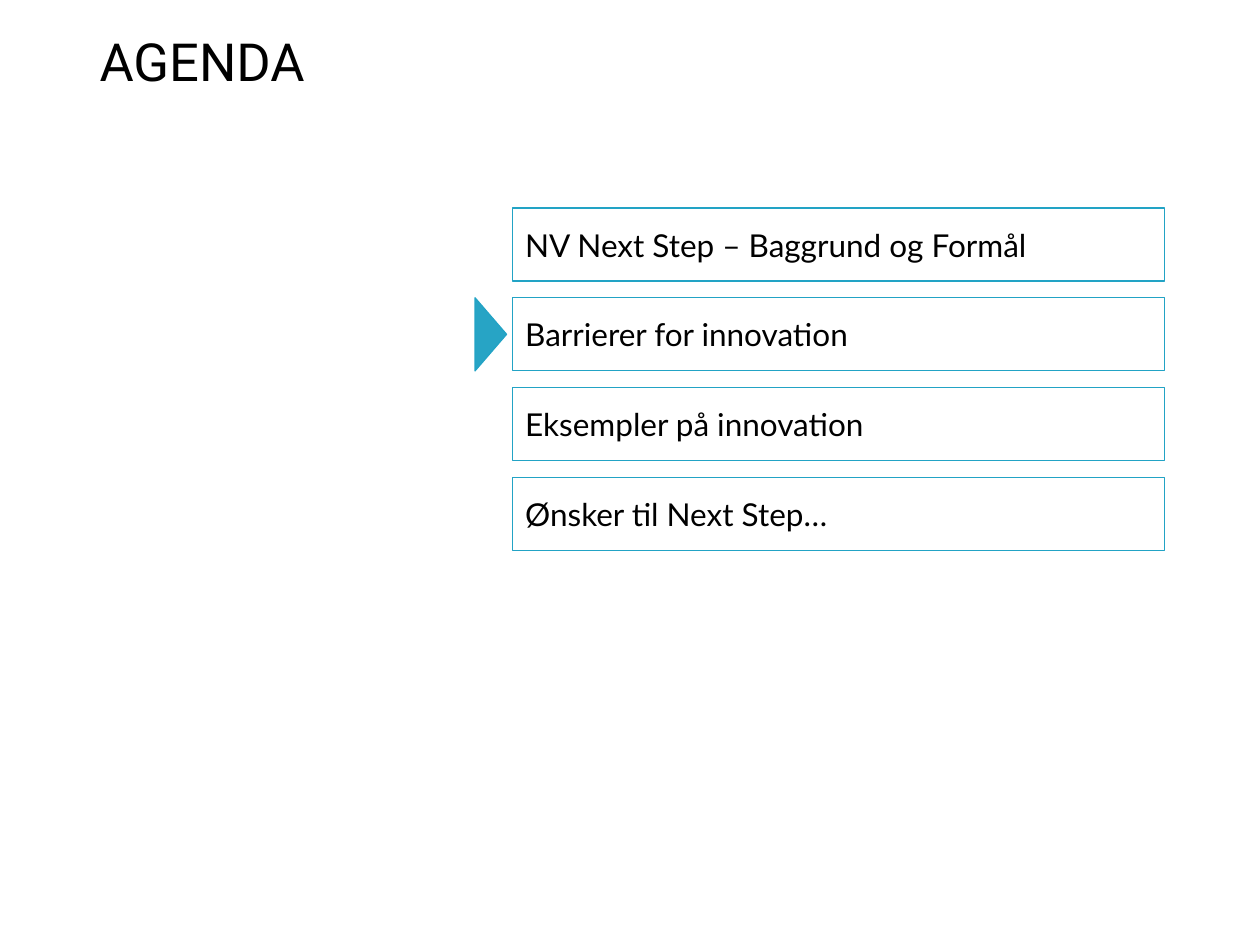
from dataclasses import dataclass

from pptx import Presentation
from pptx.dml.color import RGBColor
from pptx.enum.shapes import MSO_SHAPE as Shape
from pptx.enum.text import MSO_ANCHOR as Anchor, PP_ALIGN as Align
from pptx.util import Inches, Pt


@dataclass(frozen=True)
class Theme:
    text: RGBColor = RGBColor(0x00, 0x00, 0x00)
    outline: RGBColor = RGBColor(0x22, 0xA3, 0xC5)
    marker: RGBColor = RGBColor(0x27, 0xA4, 0xC5)
    title_font: str = "Roboto"
    body_font: str = "Lato"
    title_size: Pt = Pt(30)
    body_size: Pt = Pt(18)
    line_width: Pt = Pt(0.75)


THEME = Theme()
AGENDA = [
    "NV Next Step – Baggrund og Formål",
    "Barrierer for innovation",
    "Eksempler på innovation",
    "Ønsker til Next Step…",
]
CURRENT = 1


def write(tf, text, font, size, **frame_format):
    for name, value in {"word_wrap": True, **frame_format}.items():
        setattr(tf, name, value)
    p = tf.paragraphs[0]
    p.alignment = Align.LEFT
    r = p.add_run()
    r.text = text
    for name, value in {"name": font, "size": size}.items():
        setattr(r.font, name, value)
    r.font.color.rgb = THEME.text
    return p


def add_outlined(s, kind, x, y, w, h, fill=None):
    sp = s.shapes.add_shape(kind, Inches(x), Inches(y), Inches(w), Inches(h))
    sp.shadow.inherit = False
    if fill is None:
        sp.fill.background()
    else:
        sp.fill.solid()
        sp.fill.fore_color.rgb = fill
    sp.line.color.rgb = THEME.outline
    sp.line.width = THEME.line_width
    return sp


def add_title(s, text, x, y, w, h):
    sp = s.shapes.add_textbox(Inches(x), Inches(y), Inches(w), Inches(h))
    p = write(sp.text_frame, text, THEME.title_font, THEME.title_size,
              margin_left=0, margin_top=Inches(0.04),
              margin_right=0, margin_bottom=0)
    p.line_spacing = Pt(30)


def add_marker(s, x, y, w, h):
    # The triangle is laid out upright, then turned to fill the given box
    sp = add_outlined(s, Shape.ISOSCELES_TRIANGLE,
                      x + (w - h) / 2, y + (h - w) / 2, h, w, THEME.marker)
    sp.rotation = 90


def add_agenda(s, items, current, x, y, w, h, row_h=0.58):
    pitch = (h - row_h) / (len(items) - 1)
    marker_w, marker_gap = 0.25, 0.05
    for i, item in enumerate(items):
        top = y + i * pitch
        sp = add_outlined(s, Shape.RECTANGLE, x, top, w, row_h)
        write(sp.text_frame, item, THEME.body_font, THEME.body_size,
              vertical_anchor=Anchor.MIDDLE)
        if i == current:
            add_marker(s, x - marker_gap - marker_w, top, marker_w, row_h)


def main():
    prs = Presentation()
    prs.slide_width, prs.slide_height = Inches(10), Inches(7.5)
    s = prs.slides.add_slide(prs.slide_layouts[6])

    # Heading
    add_title(s, "AGENDA", 0.79, 0.27, 6.89, 1.34)
    # Agenda rows, with a marker at the current one
    add_agenda(s, AGENDA, CURRENT, 4.07, 1.65, 5.17, 2.72)

    prs.save("out.pptx")


if __name__ == "__main__":
    main()
